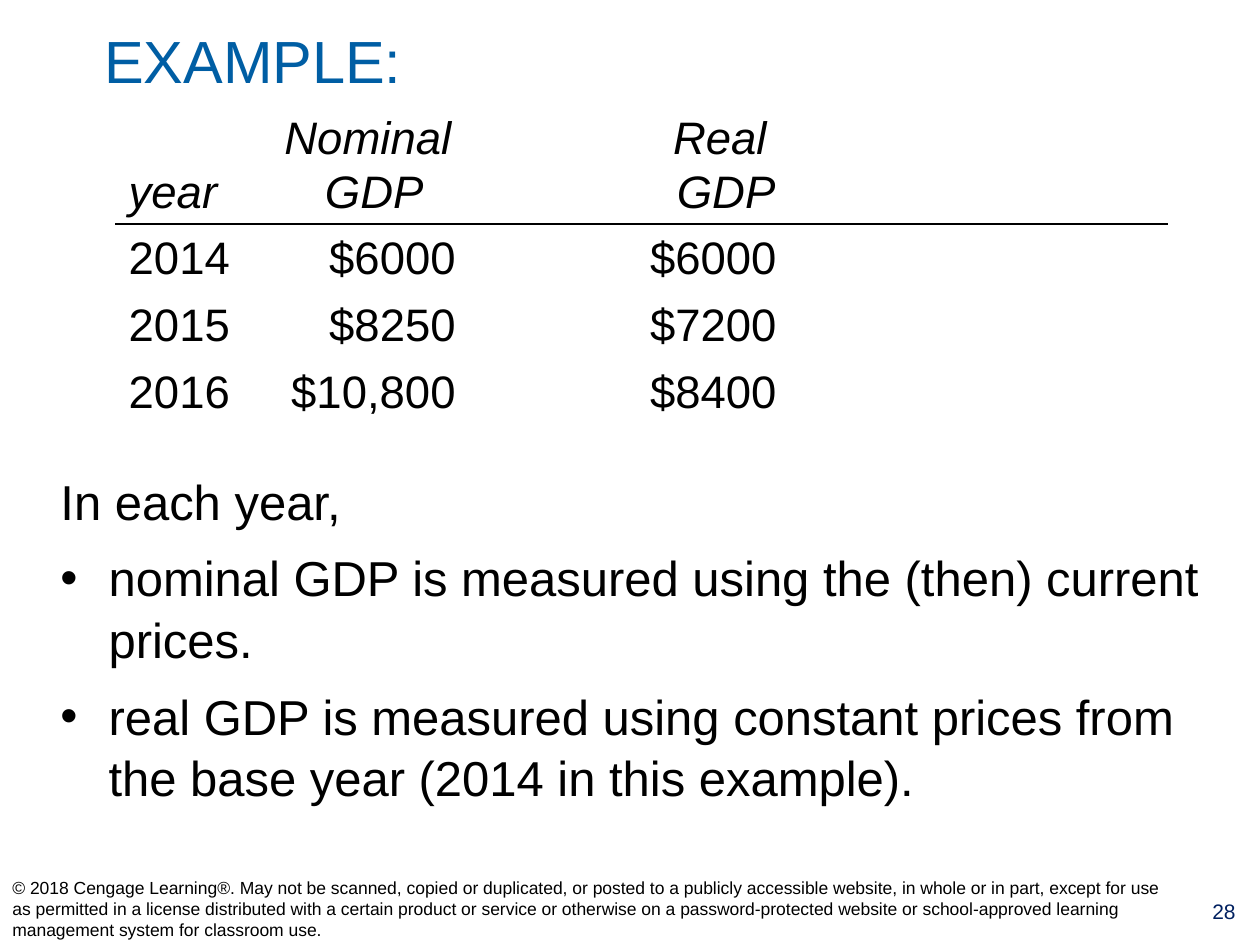
from dataclasses import dataclass

from lxml import etree
from pptx import Presentation
from pptx.dml.color import RGBColor
from pptx.enum.text import MSO_ANCHOR, PP_ALIGN
from pptx.oxml.ns import qn
from pptx.util import Cm, Pt

LEFT, CENTER, RIGHT = PP_ALIGN.LEFT, PP_ALIGN.CENTER, PP_ALIGN.RIGHT
TOP, MIDDLE, BOTTOM = MSO_ANCHOR.TOP, MSO_ANCHOR.MIDDLE, MSO_ANCHOR.BOTTOM
TITLE_ONLY = 5


@dataclass(frozen=True)
class Theme:
    font: str = "Arial"
    title: RGBColor = RGBColor(0x00, 0x5E, 0xA4)
    text: RGBColor = RGBColor(0x00, 0x00, 0x00)
    number: RGBColor = RGBColor(0x00, 0x20, 0x60)
    title_size: int = 34
    body_size: int = 28
    table_size: int = 26
    number_size: int = 12
    footer_size: int = 10


theme = Theme()


def style(para, size, color, align=LEFT, italic=False):
    para.alignment = align
    para.font.name = theme.font
    para.font.size = Pt(size)
    para.font.color.rgb = color
    para.font.italic = italic


def add_text_box(left, top, width, height, anchor=TOP):
    frame = page.shapes.add_textbox(Cm(left), Cm(top), Cm(width), Cm(height)).text_frame
    frame.word_wrap = True
    frame.vertical_anchor = anchor
    return frame


deck = Presentation()
deck.slide_width, deck.slide_height = Cm(25.4), Cm(19.05)
page = deck.slides.add_slide(deck.slide_layouts[TITLE_ONLY])

# Title
title = page.shapes.title
title.left, title.top, title.width, title.height = Cm(1.85), Cm(0.28), Cm(21.67), Cm(1.83)
title.text_frame.text = "EXAMPLE:"
title.text_frame.vertical_anchor = MIDDLE
style(title.text_frame.paragraphs[0], theme.title_size, theme.title)

# GDP table
rows = [
    ["year", "Nominal \vGDP", "", "Real \vGDP", ""],
    ["2014", "$6000", "", "$6000", ""],
    ["2015", "$8250", "", "$7200", ""],
    ["2016", "$10,800", "", "$8400", ""],
]
column_widths = [2.92, 4.57, 3.02, 3.58, 7.11]
row_heights = [2.41, 1.35, 1.35, 1.35]
header_align = [LEFT, CENTER, LEFT, CENTER, LEFT]
value_align = [LEFT, RIGHT, LEFT, LEFT, LEFT]

table = page.shapes.add_table(
    len(rows), len(column_widths), Cm(2.34), Cm(2.11),
    Cm(sum(column_widths)), Cm(sum(row_heights))).table
table.first_row = table.horz_banding = False
for column, width in zip(table.columns, column_widths):
    column.width = Cm(width)
for row, height in zip(table.rows, row_heights):
    row.height = Cm(height)

for r, texts in enumerate(rows):
    is_header = r == 0
    for c, text in enumerate(texts):
        cell = table.cell(r, c)
        cell.fill.background()
        cell.vertical_anchor = BOTTOM if is_header else MIDDLE
        cell.text_frame.text = text
        para = cell.text_frame.paragraphs[0]
        para.line_spacing = 1.05
        align = header_align[c] if is_header else value_align[c]
        style(para, theme.table_size, theme.text, align, is_header)
        if align == RIGHT:
            cell.margin_right = Cm(0.64)
        # Rule between the header and the values
        if r < 2:
            edge = etree.Element(qn("a:lnB" if is_header else "a:lnT"), w=str(Pt(1)))
            fill = etree.SubElement(edge, qn("a:solidFill"))
            etree.SubElement(fill, qn("a:srgbClr"), val=str(theme.text))
            cell._tc.get_or_add_tcPr().insert(0, edge)

# Explanation with bullets
body = add_text_box(0.97, 9.32, 23.67, 8.61)
statements = [
    "In each year,",
    "nominal GDP is measured using the (then) current prices.",
    "real GDP is measured using constant prices from the base year (2014 in this example).",
]
for i, statement in enumerate(statements):
    para = body.add_paragraph() if i else body.paragraphs[0]
    para.text = statement
    para.line_spacing = 1.05
    if i:
        para.space_before = Pt(8.4)
        properties = para._p.get_or_add_pPr()
        properties.set("marL", str(Cm(0.97)))
        properties.set("indent", str(-Cm(0.97)))
        etree.SubElement(properties, qn("a:buFont"), typeface=theme.font)
        etree.SubElement(properties, qn("a:buChar"), char="•")
    style(para, theme.body_size, theme.text)

# Slide number
number = add_text_box(23.95, 17.98, 1.45, 1.04)
number.text = "28"
style(number.paragraphs[0], theme.number_size, theme.number, CENTER)

# Copyright line
footer = add_text_box(0, 17.58, 23.9, 1.47, MIDDLE)
footer.text = (
    "© 2018 Cengage Learning®. May not be scanned, copied or duplicated, or posted to a "
    "publicly accessible website, in whole or in part, except for use as permitted in a "
    "license distributed with a certain product or service or otherwise on a "
    "password-protected website or school-approved learning management system for "
    "classroom use.")
style(footer.paragraphs[0], theme.footer_size, theme.text)

deck.save("out.pptx")
